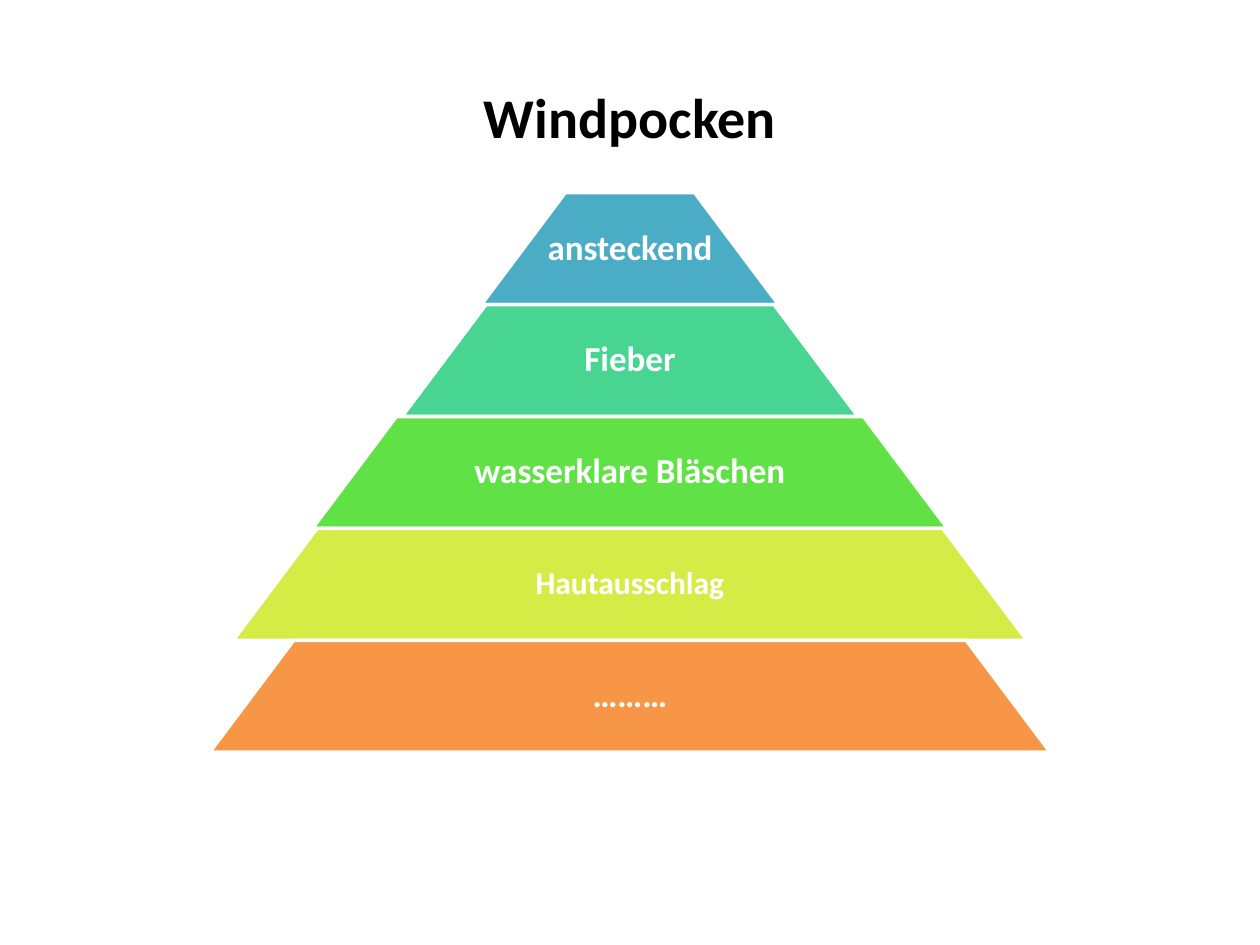
import pptx
import pptx.util
import pptx.dml.color
import pptx.enum.shapes
import pptx.enum.text

Inches, Pt = pptx.util.Inches, pptx.util.Pt
SLIDE_W, SLIDE_H = 10, 7.5
FONT = "Calibri"
COLORS = {
    "title": "000000", "white": "FFFFFF", "blue": "4BACC6", "mint": "48D491",
    "green": "60E146", "lime": "D5EC46", "orange": "F79646",
}

# Pyramid: equal rows, centred on the slide
PYRAMID_TOP, PYRAMID_H = 1.53, 4.44
SLOPE = 0.75
LABEL_SHARE = 0.65
# label, fill, band width, label width as share of band, size, inset
BANDS = [
    ("ansteckend", "blue", 2.36, 1, 20, 0.03),
    ("Fieber", "mint", 3.62, LABEL_SHARE, 20, 0.03),
    ("wasserklare Bläschen", "green", 5.04, LABEL_SHARE, 20, 0.03),
    ("Hautausschlag", "lime", 6.3, LABEL_SHARE, 18, 0.05),
    ("………", "orange", 6.67, LABEL_SHARE, 20, 0.03),
]


def rgb(name):
    return pptx.dml.color.RGBColor.from_string(COLORS[name])


def centred(top, width, height):
    """Box centred across the slide."""
    return [Inches(v) for v in ((SLIDE_W - width) / 2, top, width, height)]


def add_text(slide, text, box, size, color, inset):
    tf = slide.shapes.add_textbox(*box).text_frame
    tf.word_wrap = True
    tf.vertical_anchor = pptx.enum.text.MSO_ANCHOR.MIDDLE
    tf.margin_left = tf.margin_right = Inches(inset)
    tf.margin_top = tf.margin_bottom = Inches(inset)
    p = tf.paragraphs[0]
    p.text = text
    p.alignment = pptx.enum.text.PP_ALIGN.CENTER
    p.font.name, p.font.size, p.font.bold = FONT, Pt(size), True
    p.font.color.rgb = rgb(color)
    return p


def add_band(slide, box, fill):
    sp = slide.shapes.add_shape(pptx.enum.shapes.MSO_SHAPE.TRAPEZOID, *box)
    sp.adjustments[0] = SLOPE
    sp.shadow.inherit = False
    sp.fill.solid()
    sp.fill.fore_color.rgb = rgb(fill)
    sp.line.color.rgb = rgb("white")
    sp.line.width = Pt(2)


def main():
    prs = pptx.Presentation()
    prs.slide_width, prs.slide_height = Inches(SLIDE_W), Inches(SLIDE_H)
    slide = prs.slides.add_slide(prs.slide_layouts[6])

    # Title
    add_text(slide, "Windpocken", centred(0.3, 9, 1.25), 32, "title", 0.05)

    # Bands with their labels, from top to bottom
    row_h = PYRAMID_H / len(BANDS)
    for row, (label, fill, width, share, size, inset) in enumerate(BANDS):
        top = PYRAMID_TOP + row * row_h
        add_band(slide, centred(top, width, row_h), fill)
        p = add_text(slide, label, centred(top, width * share, row_h),
                     size, "white", inset)
        p.line_spacing = 0.9

    prs.save("out.pptx")


if __name__ == "__main__":
    main()
